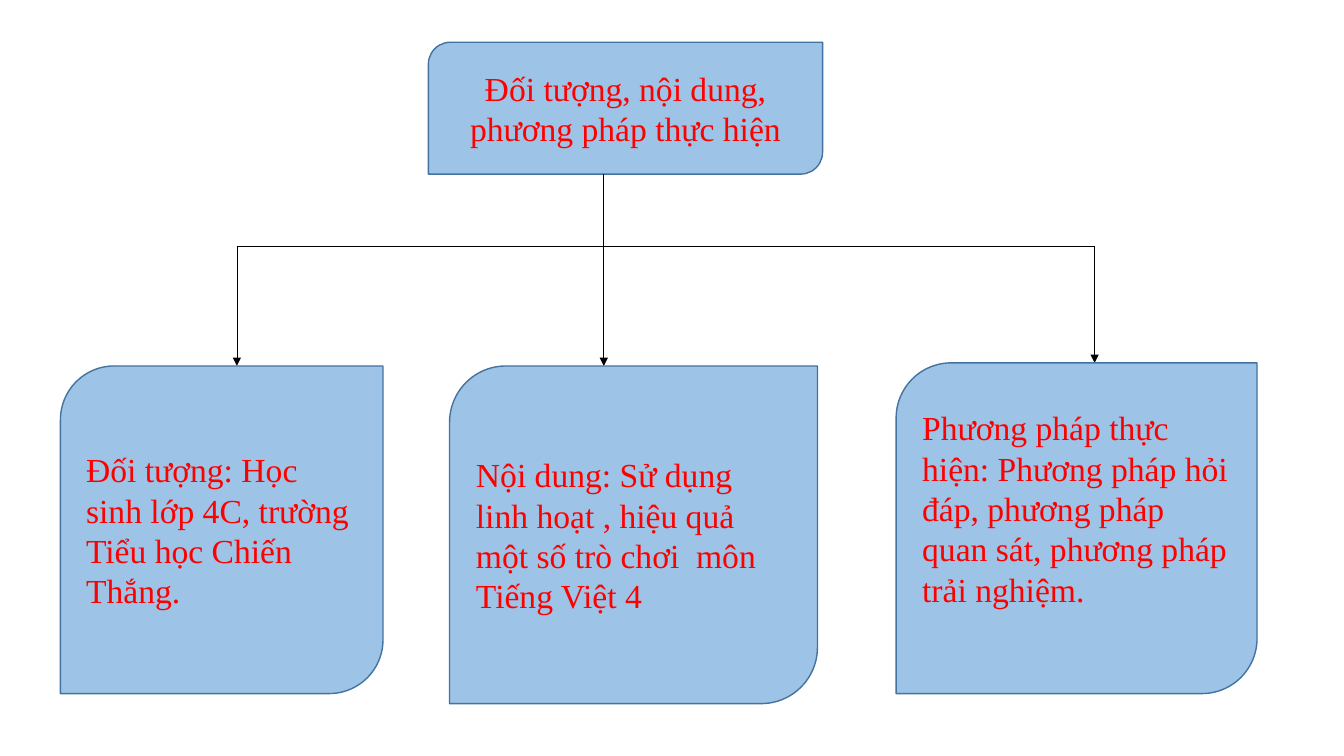
from lxml import etree
from pptx import Presentation
from pptx.dml.color import RGBColor
from pptx.enum import shapes, text
from pptx.oxml import ns
from pptx.util import Pt

COLOURS = {"fill": "9DC3E6", "border": "43739E", "text": "FF0000", "link": "000000"}
TOPIC = "Đối tượng, nội dung, phương pháp thực hiện"
TOPIC_BOX = (306, 30.2, 281.6, 94.2)
BUS_Y = 175.7
TRUNK_X = 431.3
BRANCHES = [
    ("Đối tượng: Học sinh lớp 4C, trường Tiểu học Chiến Thắng.",
     (43.2, 261.4, 230.4, 234), 169.2, 3.6),
    ("Nội dung: Sử dụng linh hoạt , hiệu quả một số trò chơi  môn Tiếng Việt 4",
     (321.1, 261.4, 262.8, 241.2), TRUNK_X, 3.6),
    ("Phương pháp thực hiện: Phương pháp hỏi đáp, phương pháp quan sát, "
     "phương pháp trải nghiệm.",
     (640.1, 259.2, 257.8, 236.2), 781.9, 32.4),
]


def colour(role):
    """Return the colour for a role in the diagram."""
    return RGBColor.from_string(COLOURS[role])


def add_node(slide, box, wording, alignment, bottom_inset=3.6):
    """Place a labelled node with two rounded corners in the box."""
    node = slide.shapes.add_shape(
        shapes.MSO_SHAPE.ROUND_2_DIAG_RECTANGLE, *map(Pt, box))
    node.shadow.inherit = False
    node.fill.solid()
    node.fill.fore_color.rgb = colour("fill")
    node.line.color.rgb = colour("border")
    node.line.width = Pt(1)
    frame = node.text_frame
    frame.word_wrap = True
    frame.vertical_anchor = text.MSO_ANCHOR.MIDDLE
    frame.margin_bottom = Pt(bottom_inset)
    label = frame.paragraphs[0]
    label.text = wording
    label.alignment = alignment
    label.font.name = "Times New Roman"
    label.font.size = Pt(24)
    label.font.color.rgb = colour("text")


def add_link(slide, start, end, arrow=False):
    """Draw a thin line between two points, with an optional arrowhead."""
    link = slide.shapes.add_connector(
        shapes.MSO_CONNECTOR.STRAIGHT, *map(Pt, start + end))
    link.line.color.rgb = colour("link")
    link.line.width = Pt(0.5)
    if arrow:
        etree.SubElement(link.line._get_or_add_ln(), ns.qn("a:tailEnd"), type="triangle")
    etree.SubElement(link._element.spPr, ns.qn("a:effectLst"))


def add_branch(slide, box, wording, stem_x, bottom_inset):
    """Draw a branch node and the arrow that reaches its top edge."""
    add_link(slide, (stem_x, BUS_Y), (stem_x, box[1]), arrow=True)
    add_node(slide, box, wording, text.PP_ALIGN.LEFT, bottom_inset)


def add_topic(slide, box):
    """Draw the topic node, its trunk and the bus over the branches."""
    add_node(slide, box, TOPIC, text.PP_ALIGN.CENTER)
    add_link(slide, (TRUNK_X, box[1] + box[3]), (TRUNK_X, BUS_Y))
    stems = [stem_x for _, _, stem_x, _ in BRANCHES]
    add_link(slide, (min(stems), BUS_Y), (max(stems), BUS_Y))


def main():
    """Build the slide and save it."""
    deck = Presentation()
    deck.slide_width, deck.slide_height = Pt(960), Pt(540)
    slide = deck.slides.add_slide(deck.slide_layouts[6])
    add_topic(slide, TOPIC_BOX)
    for wording, box, stem_x, bottom_inset in BRANCHES:
        add_branch(slide, box, wording, stem_x, bottom_inset)
    deck.save("out.pptx")


if __name__ == "__main__":
    main()
